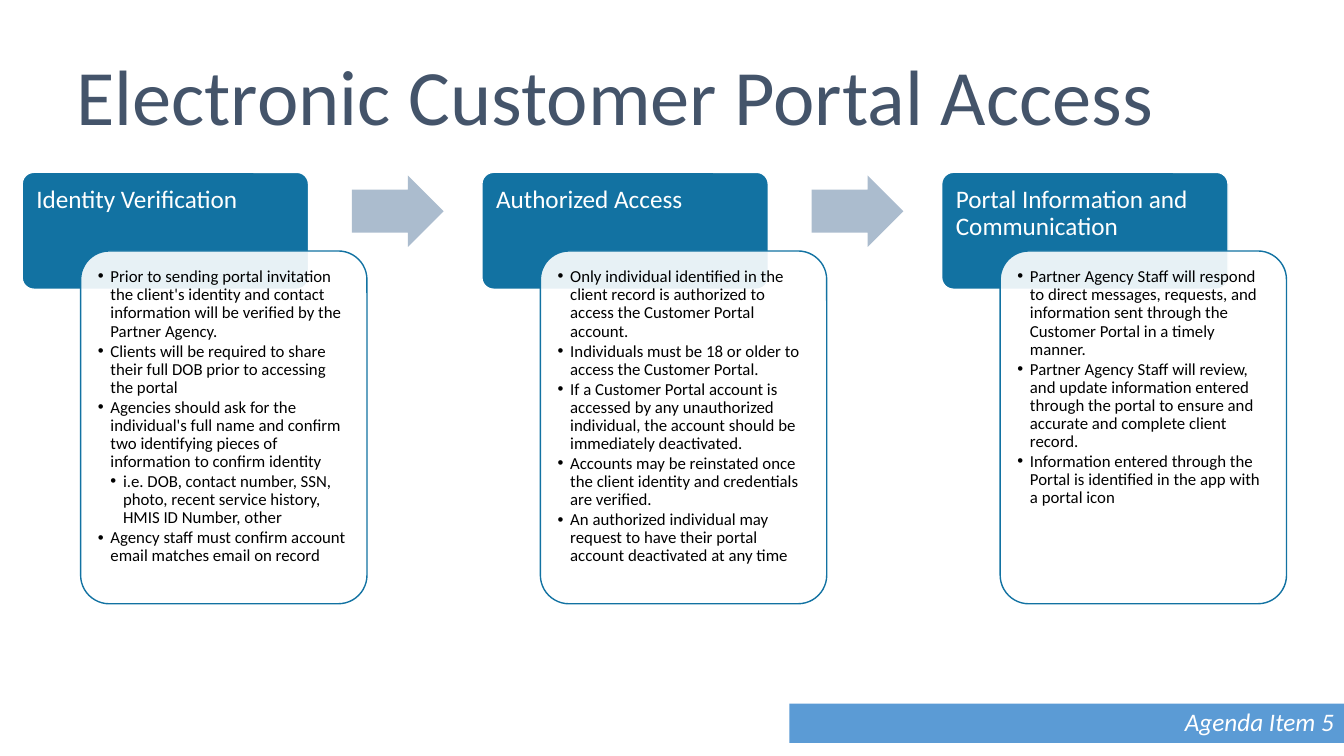
"""Build the Electronic Customer Portal Access slide."""
from dataclasses import dataclass

from lxml.etree import SubElement
from pptx import Presentation
from pptx.dml.color import RGBColor
from pptx.enum.shapes import MSO_SHAPE as Shape
from pptx.enum.text import MSO_ANCHOR as Anchor, PP_ALIGN as Align
from pptx.oxml.ns import qn
from pptx.util import Inches, Pt

TITLE = "Electronic Customer Portal Access"
AGENDA = "Agenda Item 5"
STEPS = [
    ("Identity Verification", [
        (1, "Prior to sending portal invitation the client's identity and contact "
            "information will be verified by the Partner Agency."),
        (1, "Clients will be required to share their full DOB prior to accessing the portal"),
        (1, "Agencies should ask for the individual's full name and confirm two "
            "identifying pieces of information to confirm identity"),
        (2, "i.e. DOB, contact number, SSN, photo, recent service history, "
            "HMIS ID Number, other"),
        (1, "Agency staff must confirm account email matches email on record"),
    ]),
    ("Authorized Access", [
        (1, "Only individual identified in the client record is authorized to access "
            "the Customer Portal account."),
        (1, "Individuals must be 18 or older to access the Customer Portal."),
        (1, "If a Customer Portal account is accessed by any unauthorized individual, "
            "the account should be immediately deactivated."),
        (1, "Accounts may be reinstated once the client identity and credentials "
            "are verified."),
        (1, "An authorized individual may request to have their portal account "
            "deactivated at any time"),
    ]),
    ("Portal Information and Communication", [
        (1, "Partner Agency Staff will respond to direct messages, requests, and "
            "information sent through the Customer Portal in a timely manner."),
        (1, "Partner Agency Staff will review, and update information entered through "
            "the portal to ensure and accurate and complete client record."),
        (1, "Information entered through the Portal is identified in the app with a "
            "portal icon"),
    ]),
]


@dataclass(frozen=True)
class Theme:
    font: str = "Calibri"
    title: str = "44546A"
    header: str = "1272A2"
    arrow: str = "ABBCCE"
    banner: str = "5B9BD5"
    white: str = "FFFFFF"
    body: str = "000000"
    title_size: int = 56
    head_size: int = 18
    body_size: int = 12


T = Theme()
LEFT, TOP, PITCH = 0.22, 1.71, 4.56
CARD_W, HEAD_H, BODY_H = 2.84, 1.16, 3.5
BODY_DX, BODY_DY, PAD = 0.58, 0.78, 0.08
INDENT = 0.125


def add_box(slide, kind, at, fill, line=None, adj=(), alpha=None):
    s = slide.shapes.add_shape(kind, *map(Inches, at))
    s.shadow.inherit = False
    for i, value in enumerate(adj):
        s.adjustments[i] = value
    s.fill.solid()
    s.fill.fore_color.rgb = RGBColor.from_string(fill)
    if alpha:
        color = s._element.spPr.find(qn("a:solidFill"))[0]
        SubElement(color, qn("a:alpha"), val=str(alpha * 1000))
    if line:
        s.line.color.rgb = RGBColor.from_string(line)
        s.line.width = Pt(1)
    else:
        s.line.fill.background()
    return s


def add_text(slide, at, insets):
    tf = slide.shapes.add_textbox(*map(Inches, at)).text_frame
    tf.word_wrap = True
    tf.margin_left, tf.margin_top, tf.margin_right, tf.margin_bottom = map(Inches, insets)
    return tf


def write(p, text, size, color, after=0, italic=None):
    p.text = text
    p.line_spacing = 0.9
    p.space_after = Pt(after)
    font = p.runs[0].font
    font.name, font.size, font.italic = T.font, Pt(size), italic
    font.color.rgb = RGBColor.from_string(color)


def add_bullet(p, level):
    p.level = level
    pPr = p._p.get_or_add_pPr()
    pPr.set("marL", str(Inches(INDENT * level)))
    pPr.set("indent", str(Inches(-INDENT)))
    SubElement(pPr, qn("a:buFont"), typeface="Arial")
    SubElement(pPr, qn("a:buChar"), char="•")


def add_step(slide, x, heading, items):
    add_box(slide, Shape.ROUNDED_RECTANGLE, (x, TOP, CARD_W, HEAD_H),
            T.header, T.white, [0.1])
    tf = add_text(slide, (x, TOP, CARD_W, BODY_DY), (0.14, 0.14, 0.14, 0.07))
    write(tf.paragraphs[0], heading, T.head_size, T.white)

    left, top = x + BODY_DX, TOP + BODY_DY
    add_box(slide, Shape.ROUNDED_RECTANGLE, (left, top, CARD_W, BODY_H),
            T.white, T.header, [0.1], alpha=90)
    inner = (left + PAD, top + PAD, CARD_W - 2 * PAD, BODY_H - 2 * PAD)
    tf = add_text(slide, inner, [0.09] * 4)
    for i, (level, text) in enumerate(items):
        p = tf.add_paragraph() if i else tf.paragraphs[0]
        add_bullet(p, level)
        write(p, text, T.body_size, T.body, after=1.3)


def main():
    prs = Presentation()
    prs.slide_width, prs.slide_height = Inches(13.33), Inches(7.5)
    slide = prs.slides.add_slide(prs.slide_layouts[6])

    tf = add_text(slide, (0.66, 0.52, 12.02, 1.81), (0.1, 0.05, 0.1, 0.05))
    write(tf.paragraphs[0], TITLE, T.title_size, T.title)

    tf = add_box(slide, Shape.RECTANGLE, (7.83, 6.98, 5.5, 0.39), T.banner).text_frame
    tf.word_wrap = True
    tf.vertical_anchor = Anchor.MIDDLE
    write(tf.paragraphs[0], AGENDA, T.head_size, T.white, italic=True)
    tf.paragraphs[0].alignment = Align.RIGHT

    for i, (heading, items) in enumerate(STEPS):
        x = LEFT + i * PITCH
        add_step(slide, x, heading, items)
        if i < len(STEPS) - 1:
            add_box(slide, Shape.RIGHT_ARROW, (x + 3.27, TOP + 0.03, 0.91, 0.71),
                    T.arrow, adj=[0.6, 0.5])

    prs.save("out.pptx")


if __name__ == "__main__":
    main()
